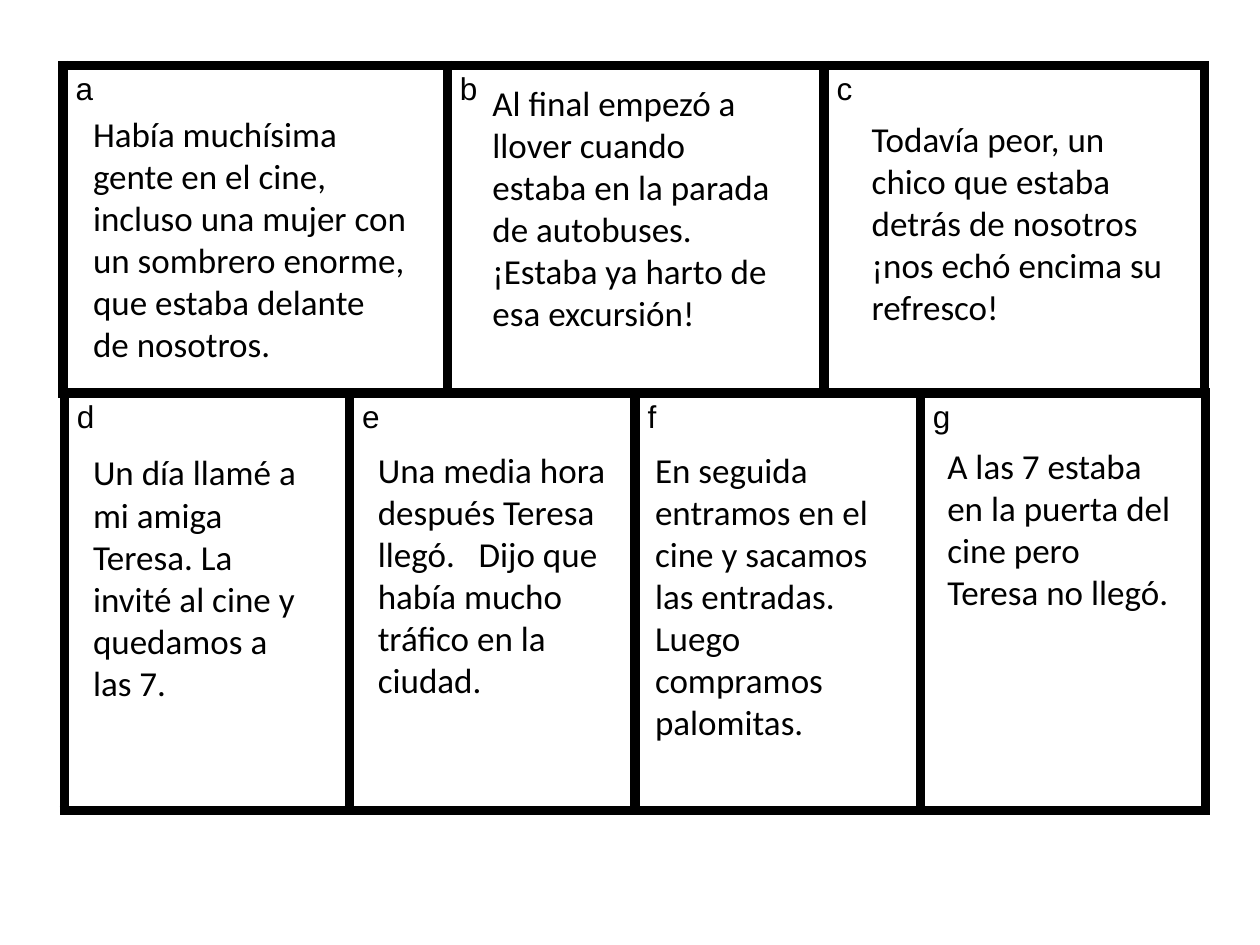
from dataclasses import dataclass

from lxml.etree import SubElement
from pptx import Presentation
from pptx.dml.color import RGBColor
from pptx.enum.text import MSO_AUTO_SIZE
from pptx.oxml.ns import qn
from pptx.util import Inches, Pt


@dataclass(frozen=True)
class Theme:
    """Colours, fonts and sizes of the story grid."""
    ink: str = "000000"
    label_font: str = "Arial"
    label_size: int = 18
    story_font: str = "Calibri"
    story_size: int = 20
    border: int = 6


THEME = Theme()

ROWS = [
    (0.51, 3.12, 3.31, [9.06 / 4] * 4, "defg"),
    (0.5, 0.52, 2.6, [3.05, 2.99, 3.02], "abc"),
]

STORY = [
    (0.64, 0.84, 2.7, 2.12,
     "Había muchísima gente en el cine, incluso una mujer con un sombrero "
     "enorme, que estaba delante de nosotros."),
    (3.81, 0.6, 2.45, 2.12,
     "Al final empezó a llover cuando estaba en la parada de autobuses.  "
     "¡Estaba ya harto de esa excursión!"),
    (6.82, 0.88, 2.58, 1.78,
     "Todavía peor, un chico que estaba detrás de nosotros ¡nos echó encima "
     "su refresco!"),
    (0.64, 3.53, 1.94, 2.12,
     "Un día llamé a mi amiga Teresa. La invité al cine y quedamos a las 7."),
    (2.9, 3.51, 2.11, 2.12,
     "Una media hora después Teresa llegó.   Dijo que había mucho tráfico en "
     "la ciudad."),
    (5.1, 3.51, 2.21, 2.46,
     "En seguida entramos en el cine y sacamos las entradas. Luego compramos "
     "palomitas."),
    (7.42, 3.48, 1.98, 1.45,
     "A las 7 estaba en la puerta del cine pero Teresa no llegó."),
]


def add_run(p, text, font, size):
    """Add one formatted run to a paragraph."""
    r = p.add_run()
    r.text = text
    r.font.name = font
    r.font.size = Pt(size)
    r.font.color.rgb = RGBColor.from_string(THEME.ink)


def set_borders(cell):
    """Draw a solid border on all four sides of a cell."""
    tc_pr = cell._tc.get_or_add_tcPr()
    for side in ("a:lnL", "a:lnR", "a:lnT", "a:lnB"):
        ln = SubElement(tc_pr, qn(side), w=str(Pt(THEME.border)))
        fill = SubElement(ln, qn("a:solidFill"))
        SubElement(fill, qn("a:srgbClr"), val=THEME.ink)


def add_row(s, left, top, height, widths, labels):
    """Add a one-row table of lettered panels."""
    frame = s.shapes.add_table(1, len(widths), Inches(left), Inches(top),
                               Inches(sum(widths)), Inches(height))
    table = frame.table
    table.first_row = table.horz_banding = False
    table.rows[0].height = Inches(height)
    for i, (width, label) in enumerate(zip(widths, labels)):
        table.columns[i].width = Inches(width)
        cell = table.cell(0, i)
        set_borders(cell)
        cell.fill.background()
        add_run(cell.text_frame.paragraphs[0], label,
                THEME.label_font, THEME.label_size)


def add_story(s, left, top, width, height, text):
    """Add the wrapped sentence of one panel."""
    sp = s.shapes.add_textbox(Inches(left), Inches(top),
                              Inches(width), Inches(height))
    tf = sp.text_frame
    tf.word_wrap = True
    tf.auto_size = MSO_AUTO_SIZE.SHAPE_TO_FIT_TEXT
    add_run(tf.paragraphs[0], text, THEME.story_font, THEME.story_size)


def main():
    """Build the slide and save it."""
    prs = Presentation()
    prs.slide_width, prs.slide_height = Inches(10), Inches(7.5)
    s = prs.slides.add_slide(prs.slide_layouts[6])
    for row in ROWS:
        add_row(s, *row)
    for panel in STORY:
        add_story(s, *panel)
    prs.save("out.pptx")


if __name__ == "__main__":
    main()
